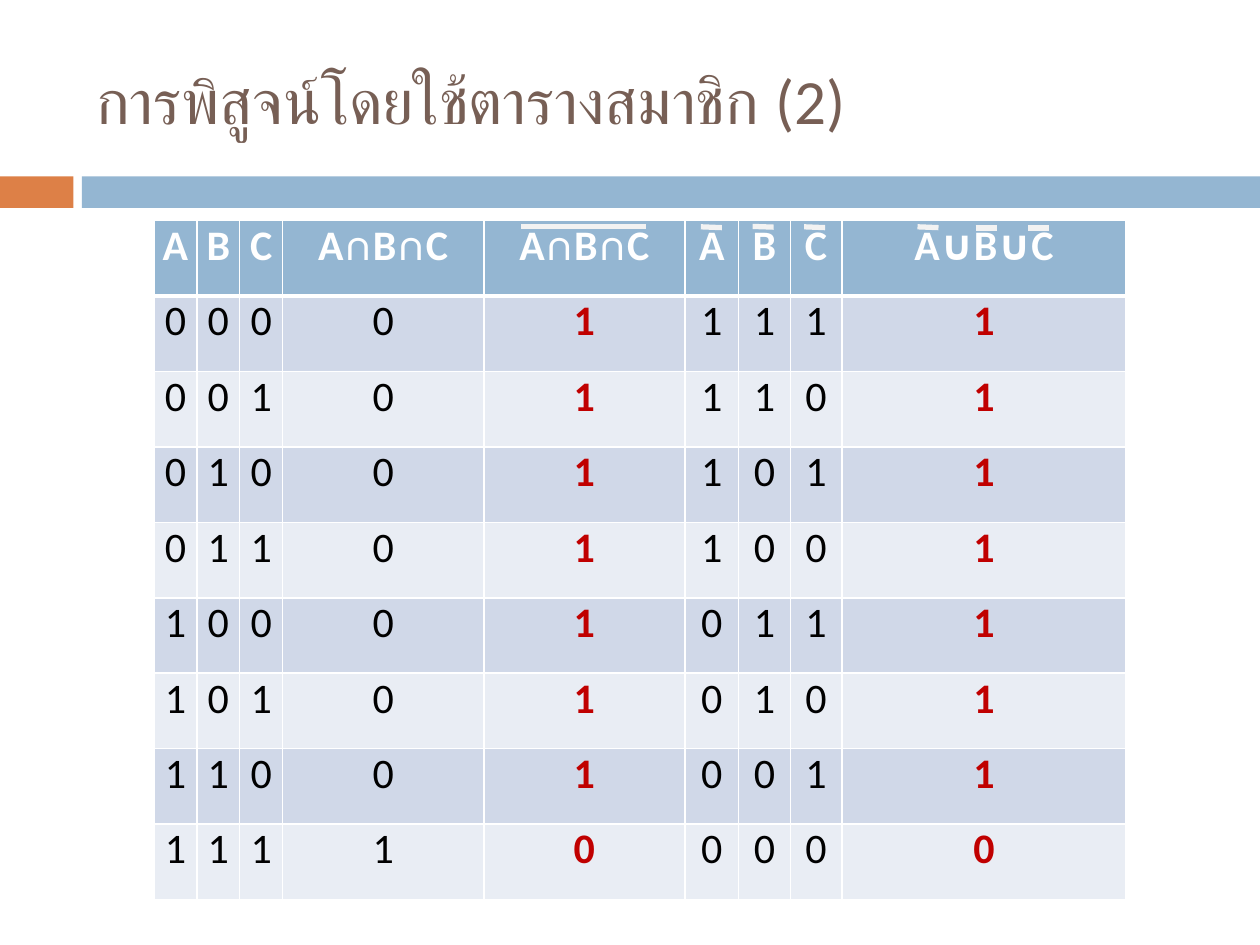
from dataclasses import dataclass
from itertools import product

from lxml import etree
from pptx import Presentation
from pptx.dml.color import RGBColor
from pptx.enum.shapes import MSO_CONNECTOR, MSO_SHAPE
from pptx.enum.text import MSO_ANCHOR, PP_ALIGN
from pptx.oxml.ns import qn
from pptx.util import Pt

RECTANGLE = MSO_SHAPE.RECTANGLE
STRAIGHT = MSO_CONNECTOR.STRAIGHT
CENTER = PP_ALIGN.CENTER
MIDDLE = MSO_ANCHOR.MIDDLE
TOP = MSO_ANCHOR.TOP

ORANGE = RGBColor(0xDD, 0x80, 0x47)
BLUE = RGBColor(0x94, 0xB6, 0xD2)
BROWN = RGBColor(0x77, 0x5F, 0x55)
DARK_BAND = RGBColor(0xD0, 0xD8, 0xE8)
LIGHT_BAND = RGBColor(0xE9, 0xED, 0xF4)
OVERLINE_GRAY = RGBColor(0xF2, 0xF2, 0xF2)
WHITE = RGBColor(0xFF, 0xFF, 0xFF)
BLACK = RGBColor(0x00, 0x00, 0x00)
RED = RGBColor(0xC0, 0x00, 0x00)

FONT = "Calibri"
HEADERS = ["A", "B", "C", "A∩B∩C", "A∩B∩C", "A", "B", "C", "A∪B∪C"]
COLUMN_WIDTHS = [24.5, 24.5, 24.5, 115, 115, 30.7, 29.5, 29.5, 162.5]
RESULT_COLUMNS = (4, 8)
ROW_HEIGHT = 43.13


@dataclass(frozen=True)
class Bar:
    left: float
    width: float
    color: RGBColor


@dataclass(frozen=True)
class Overline:
    left: float
    width: float
    start: float
    end: float


@dataclass(frozen=True)
class CellStyle:
    fill: RGBColor
    color: RGBColor
    bold: bool
    top_border: float
    bottom_border: float


BARS = [Bar(0, 42, ORANGE), Bar(46.8, 673.2, BLUE)]
OVERLINES = [
    Overline(297.6, 71.6, 129.6, 129.6),
    Overline(400.5, 12, 129.6, 130.1),
    Overline(430.1, 12, 129.4, 129.8),
    Overline(459.5, 12, 129.6, 130.1),
    Overline(524.3, 12, 129.6, 130.1),
    Overline(557.5, 12, 130.3, 130.3),
    Overline(587.7, 12, 130.3, 130.3),
]


def format_paragraph(paragraph, size: float, color: RGBColor, bold: bool) -> None:
    for run in paragraph.runs:
        run.font.name = FONT
        run.font.size = Pt(size)
        run.font.color.rgb = color
        run.font.bold = bold


def add_bar(slide, bar: Bar) -> None:
    shape = slide.shapes.add_shape(
        RECTANGLE, Pt(bar.left), Pt(100.8), Pt(bar.width), Pt(18)
    )
    shape.shadow.inherit = False
    shape.fill.solid()
    shape.fill.fore_color.rgb = bar.color
    shape.line.fill.background()


def add_title(slide, title: str) -> None:
    text_box = slide.shapes.add_textbox(Pt(48), Pt(18), Pt(642), Pt(78))
    text_frame = text_box.text_frame
    text_frame.word_wrap = True
    text_frame.vertical_anchor = MIDDLE
    text_frame.text = title
    format_paragraph(text_frame.paragraphs[0], 36, BROWN, False)


def add_border(cell, side: str, width: float) -> None:
    properties = cell._tc.get_or_add_tcPr()
    border = etree.SubElement(properties, qn(f"a:{side}"), w=str(Pt(width)))
    fill = etree.SubElement(border, qn("a:solidFill"))
    etree.SubElement(fill, qn("a:srgbClr"), val=str(WHITE))


def fill_cell(cell, text: str, style: CellStyle) -> None:
    cell.margin_left = cell.margin_right = Pt(0)
    cell.margin_top = cell.margin_bottom = Pt(0)
    cell.vertical_anchor = TOP
    add_border(cell, "lnL", 1)
    add_border(cell, "lnR", 1)
    add_border(cell, "lnT", style.top_border)
    add_border(cell, "lnB", style.bottom_border)
    cell.fill.solid()
    cell.fill.fore_color.rgb = style.fill
    cell.text_frame.text = text
    paragraph = cell.text_frame.paragraphs[0]
    paragraph.alignment = CENTER
    format_paragraph(paragraph, 24, style.color, style.bold)


def membership_row(a: int, b: int, c: int) -> list[str]:
    intersection = a & b & c
    complements = [1 - a, 1 - b, 1 - c]
    values = [a, b, c, intersection, 1 - intersection, *complements, max(complements)]
    return [str(value) for value in values]


def cell_style(row: int, column: int) -> CellStyle:
    if row == 0:
        return CellStyle(BLUE, WHITE, True, 1, 3)
    is_result = column in RESULT_COLUMNS
    return CellStyle(
        fill=DARK_BAND if row % 2 else LIGHT_BAND,
        color=RED if is_result else BLACK,
        bold=is_result,
        top_border=3 if row == 1 else 1,
        bottom_border=1,
    )


def add_membership_table(slide) -> None:
    rows = [HEADERS] + [membership_row(*bits) for bits in product((0, 1), repeat=3)]
    table = slide.shapes.add_table(
        len(rows), len(HEADERS), Pt(88), Pt(126),
        Pt(sum(COLUMN_WIDTHS)), Pt(ROW_HEIGHT * len(rows)),
    ).table
    for column, width in zip(table.columns, COLUMN_WIDTHS):
        column.width = Pt(width)
    for row_index, texts in enumerate(rows):
        table.rows[row_index].height = Pt(ROW_HEIGHT)
        for column_index, text in enumerate(texts):
            style = cell_style(row_index, column_index)
            fill_cell(table.cell(row_index, column_index), text, style)


def add_overline(slide, overline: Overline) -> None:
    connector = slide.shapes.add_connector(
        STRAIGHT, Pt(overline.left), Pt(overline.start),
        Pt(overline.left + overline.width), Pt(overline.end),
    )
    connector.line.color.rgb = OVERLINE_GRAY
    connector.line.width = Pt(3)
    etree.SubElement(connector._element.spPr, qn("a:effectLst"))


def main() -> None:
    presentation = Presentation()
    presentation.slide_width = Pt(720)
    presentation.slide_height = Pt(540)
    slide = presentation.slides.add_slide(presentation.slide_layouts[6])
    for bar in BARS:
        add_bar(slide, bar)
    add_title(slide, "การพิสูจน์โดยใช้ตารางสมาชิก (2)")
    add_membership_table(slide)
    for overline in OVERLINES:
        add_overline(slide, overline)
    presentation.save("out.pptx")


if __name__ == "__main__":
    main()
